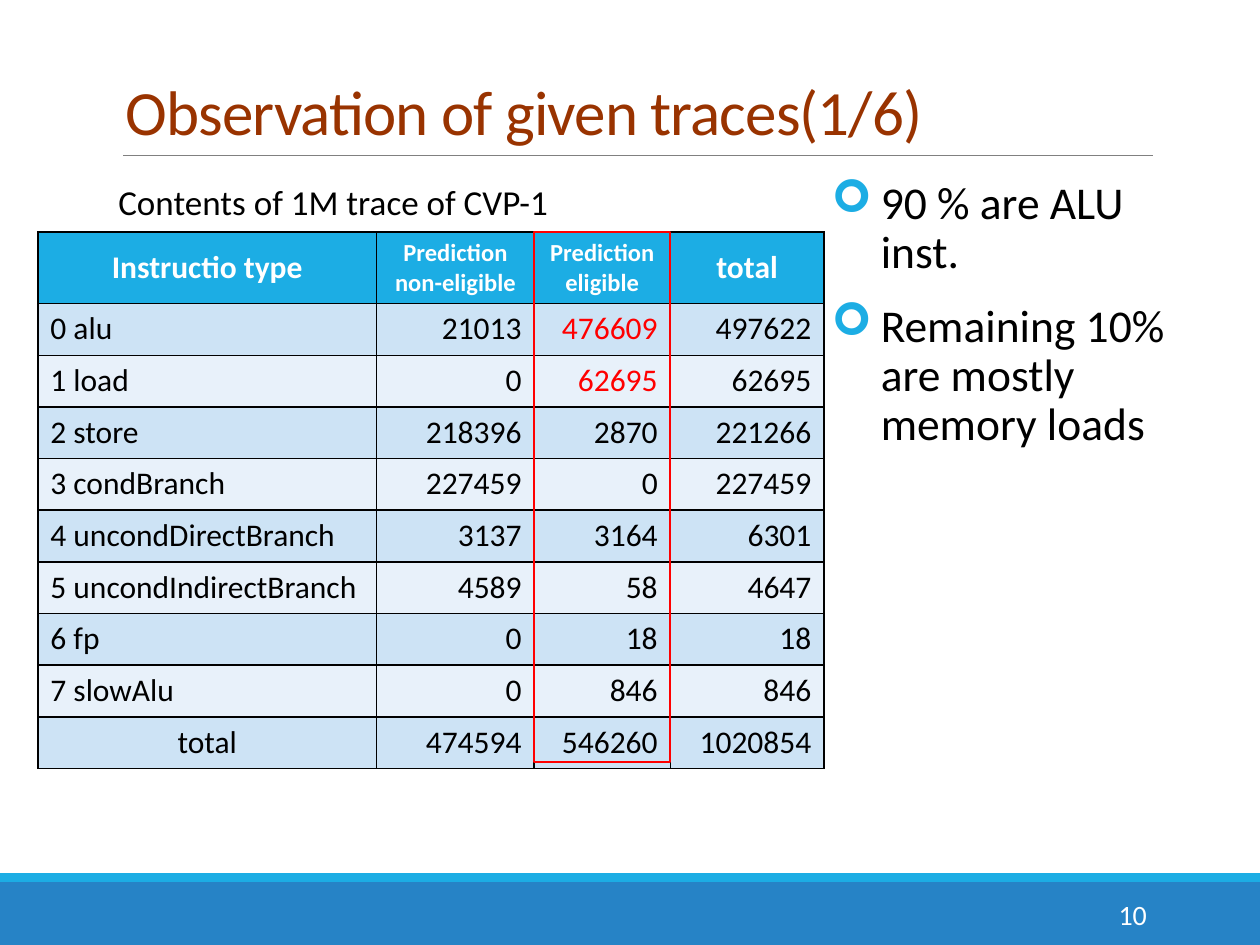
import pptx
import pptx.dml.color
import pptx.enum.shapes
import pptx.enum.text
import pptx.oxml
import pptx.oxml.ns
import pptx.util

ALIGN = pptx.enum.text.PP_ALIGN
ANCHOR = pptx.enum.text.MSO_ANCHOR
SHAPE = pptx.enum.shapes.MSO_SHAPE
INCH = pptx.util.Inches

TITLE = "Observation of given traces(1/6)"
CAPTION = "Contents of 1M trace of CVP-1"
FINDINGS = ["90 % are ALU inst.", "Remaining 10% are mostly memory loads"]
PAGE = "10"
HEADINGS = [("Instructio type", 18), ("Prediction non-eligible", 14),
            ("Prediction eligible", 14), ("total", 18)]
COUNTS = [
    ("0 alu", 21013, 476609, 497622),
    ("1 load", 0, 62695, 62695),
    ("2 store", 218396, 2870, 221266),
    ("3 condBranch", 227459, 0, 227459),
    ("4 uncondDirectBranch", 3137, 3164, 6301),
    ("5 uncondIndirectBranch", 4589, 58, 4647),
    ("6 fp", 0, 18, 18),
    ("7 slowAlu", 0, 846, 846),
    ("total", 474594, 546260, 1020854),
]
HIGHLIGHTS = {(1, 2), (2, 2)}
ELIGIBLE = 2

WIDTH, HEIGHT = 10, 7.5
FOOTER_TOP, STRIPE = 7, 0.07
TABLE_LEFT, TABLE_TOP = 0.3, 1.84
COLUMNS = [2.69, 1.25, 1.08, 1.22]
ROWS = [0.57] + [0.41] * len(COUNTS)
BLACK, WHITE, RED, CYAN, BLUE = "000000", "FFFFFF", "FF0000", "1CADE4", "2683C6"
BANDS = ["CDE3F5", "E8F1FA"]


def rgb(value):
    return pptx.dml.color.RGBColor.from_string(value)


def apply(target, formats):
    for name, value in formats.items():
        setattr(target, name, value)


def xml(tag, attributes="", inner=""):
    return pptx.oxml.parse_xml(
        f'<a:{tag} {pptx.oxml.ns.nsdecls("a")} {attributes}>{inner}</a:{tag}>')


def write(paragraph, text, size, color, bold=False, **formats):
    run = paragraph.add_run()
    run.text = text
    apply(run.font, {"name": "Calibri", "size": pptx.util.Pt(size), "bold": bold})
    run.font.color.rgb = rgb(color)
    apply(paragraph, formats)
    return run


def add_text(slide, box, **formats):
    frame = slide.shapes.add_textbox(*map(INCH, box)).text_frame
    apply(frame, {"word_wrap": True, **formats})
    return frame


def add_box(slide, box, fill=None, line=None):
    shape = slide.shapes.add_shape(SHAPE.RECTANGLE, *map(INCH, box))
    shape.shadow.inherit = False
    if fill:
        shape.fill.solid()
        shape.fill.fore_color.rgb = rgb(fill)
    else:
        shape.fill.background()
    if line:
        shape.line.color.rgb = rgb(line)
        shape.line.width = pptx.util.Pt(1.25)
    else:
        shape.line.fill.background()


def add_frame(slide):
    add_box(slide, (0, FOOTER_TOP, WIDTH, HEIGHT - FOOTER_TOP), BLUE)
    add_box(slide, (0, FOOTER_TOP - STRIPE, WIDTH, STRIPE), CYAN)
    rule = slide.shapes.add_connector(
        pptx.enum.shapes.MSO_CONNECTOR.STRAIGHT, *map(INCH, (0.98, 1.23, 9.15, 1.23)))
    rule.line.color.rgb = rgb("808080")
    rule.line.width = pptx.util.Pt(0.5)
    rule._element.spPr.append(xml("effectLst"))
    title = add_text(slide, (0.9, 0.26, 8.25, 0.97), vertical_anchor=ANCHOR.BOTTOM)
    heading = write(title.paragraphs[0], TITLE, 36, "993300", line_spacing=0.85)
    heading._r.get_or_add_rPr().set("spc", "-50")
    number = add_text(slide, (8.12, 7.06, 1.08, 0.4), vertical_anchor=ANCHOR.MIDDLE)
    write(number.paragraphs[0], PAGE, 16, WHITE, alignment=ALIGN.RIGHT)


def add_findings(slide):
    frame = add_text(slide, (6.6, 1.38, 2.82, 5.38), margin_left=0, margin_right=0)
    for index, finding in enumerate(FINDINGS):
        paragraph = frame.add_paragraph() if index else frame.paragraphs[0]
        write(paragraph, finding, 26, BLACK, line_spacing=0.9,
              space_before=pptx.util.Pt(12), space_after=pptx.util.Pt(2))
        properties = paragraph._p.get_or_add_pPr()
        indent = INCH(0.39)
        properties.set("marL", str(indent))
        properties.set("indent", str(-indent))
        properties.append(xml("buClr", inner=f'<a:srgbClr val="{CYAN}"/>'))
        properties.append(xml("buFont", 'typeface="Wingdings"'))
        properties.append(xml("buChar", 'char="➢"'))


def fill_cell(cell, fill, anchor):
    properties = cell._tc.get_or_add_tcPr()
    for side in ("lnL", "lnR", "lnT", "lnB"):
        properties.append(xml(side, f'w="{pptx.util.Pt(1)}"',
                              f'<a:solidFill><a:srgbClr val="{BLACK}"/></a:solidFill>'))
    cell.fill.solid()
    cell.fill.fore_color.rgb = rgb(fill)
    cell.vertical_anchor = anchor


def add_counts(slide):
    box = (TABLE_LEFT, TABLE_TOP, sum(COLUMNS), sum(ROWS))
    table = slide.shapes.add_table(len(ROWS), len(COLUMNS), *map(INCH, box)).table
    for column, width in zip(table.columns, COLUMNS):
        column.width = INCH(width)
    for row, height in zip(table.rows, ROWS):
        row.height = INCH(height)
    for column, (heading, size) in enumerate(HEADINGS):
        cell = table.cell(0, column)
        fill_cell(cell, CYAN, ANCHOR.MIDDLE)
        write(cell.text_frame.paragraphs[0], heading, size, WHITE, True,
              alignment=ALIGN.CENTER)
    for row, counts in enumerate(COUNTS, 1):
        label_align = ALIGN.CENTER if row == len(COUNTS) else ALIGN.LEFT
        for column, value in enumerate(counts):
            cell = table.cell(row, column)
            fill_cell(cell, BANDS[(row - 1) % 2], ANCHOR.TOP)
            write(cell.text_frame.paragraphs[0], str(value), 18,
                  RED if (row, column) in HIGHLIGHTS else BLACK,
                  alignment=ALIGN.RIGHT if column else label_align)
    caption = add_text(slide, (0.84, 1.38, 3.65, 0.44), word_wrap=False)
    write(caption.paragraphs[0], CAPTION, 20, BLACK)
    add_box(slide, (TABLE_LEFT + sum(COLUMNS[:ELIGIBLE]), TABLE_TOP,
                    COLUMNS[ELIGIBLE], 4.21), line=RED)


def main():
    deck = pptx.Presentation()
    apply(deck, {"slide_width": INCH(WIDTH), "slide_height": INCH(HEIGHT)})
    slide = deck.slides.add_slide(deck.slide_layouts[6])
    add_frame(slide)
    add_findings(slide)
    add_counts(slide)
    deck.save("out.pptx")


if __name__ == "__main__":
    main()
